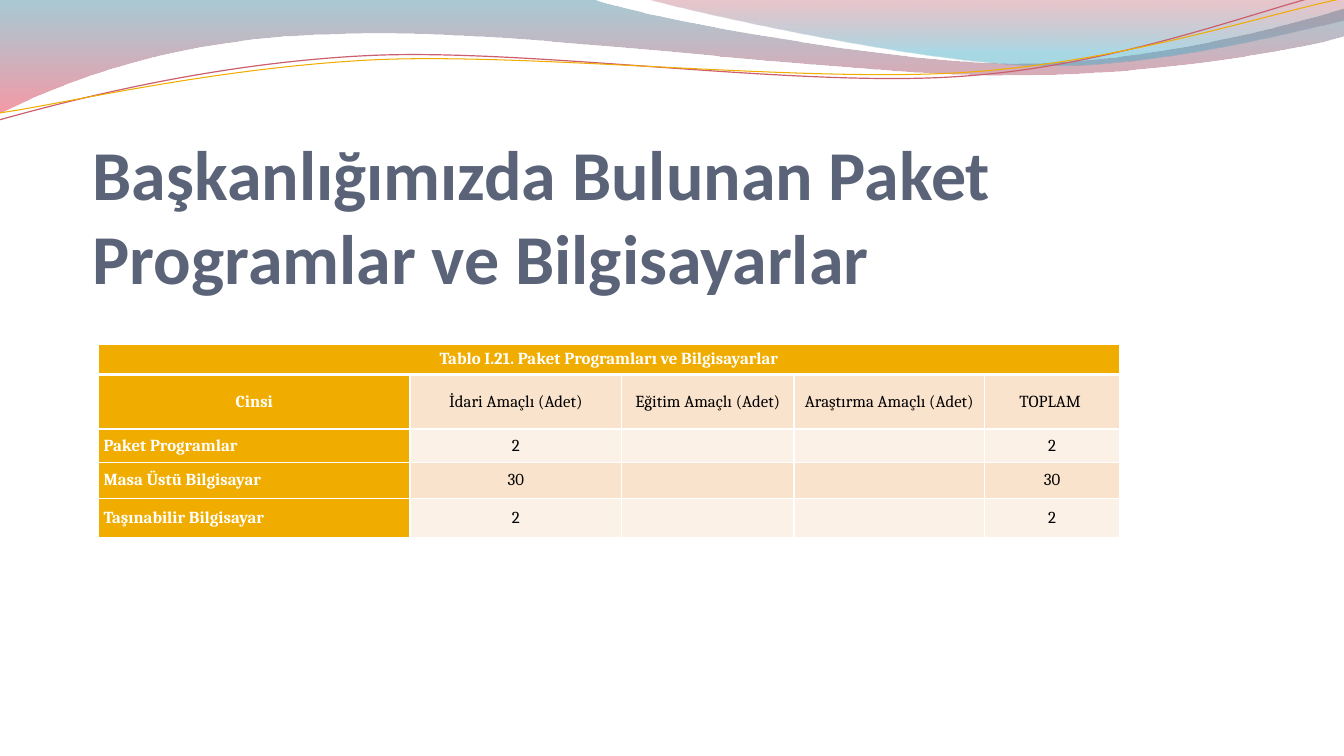
from lxml.etree import SubElement
from pptx import Presentation
from pptx.dml.color import RGBColor
from pptx.enum.text import MSO_ANCHOR as Anchor, MSO_AUTO_SIZE as AutoSize, PP_ALIGN as Align
from pptx.oxml.ns import qn
from pptx.util import Pt

AMBER, WHITE, BLACK, SLATE = "F0AD00", "FFFFFF", "000000", "5A6378"
BANDS = ("FCF1E7", "F9E3CC")

# Each wave starts at a point; two numbers draw a line, six a curve
UPPER_WAVE = [(0, 0), (422.6, -0.7),
              (456.5, 12.2, 637.2, 45.4, 727.9, 45.4),
              (819.4, 45.4, 920.2, 18.7, 959.8, 6.5), (961.2, 25.9),
              (943.9, 31.7, 835.2, 54.7, 715.7, 54),
              (596.9, 54, 366.5, 20.2, 247, 24.5),
              (123.1, 25.9, 43.9, 59.8, -0.7, 81.4)]
RIGHT_WAVE = [(460.1, -0.7),
              (488.9, 7.9, 654.5, 44.6, 738, 46.8),
              (821.5, 49.7, 923, 23, 959.8, 15.1), (959.8, 0)]
RED_LINE = [(-0.7, 85.7),
            (46.1, 72.7, 151.9, 44.6, 265.7, 39.6),
            (379.4, 34.6, 568.8, 62.6, 684, 54.7),
            (799.2, 47.5, 901.4, 5.8, 958.3, -7.2)]
AMBER_LINE = [(0, 80.6),
              (45.4, 74.2, 157, 47.5, 272.2, 42.5),
              (386.6, 38.2, 573.1, 59, 687.6, 51.8),
              (802.8, 44.6, 903.6, 10.1, 960.5, -1.4)]

TABLE_TITLE = "Tablo I.21. Paket Programları ve Bilgisayarlar"
ROWS = [
    ["Cinsi", "İdari Amaçlı (Adet)", "Eğitim Amaçlı (Adet)", "Araştırma Amaçlı (Adet)", "TOPLAM "],
    ["Paket Programlar", "2", "", "", "2"],
    ["Masa Üstü Bilgisayar", "30", "", "", "30"],
    ["Taşınabilir Bilgisayar", "2", "", "", "2"],
]
COLUMN_WIDTHS = (222.5, 151.2, 123.1, 136.1, 96.5)
ROW_HEIGHTS = (21.6, 38.9, 23.8, 25.9, 28.1)


def colour(value):
    return RGBColor.from_string(value)


def add_outline(page, segments, close):
    """Draw the outline through its end points, then bend the curved parts."""
    start, *ends = [(Pt(segment[-2]), Pt(segment[-1])) for segment in segments]
    builder = page.shapes.build_freeform(*start, scale=1.0)
    builder.add_line_segments(ends, close=close)
    shape = builder.convert_to_shape()
    shape.shadow.inherit = False
    lines = list(shape.element.spPr.iter(qn("a:lnTo")))
    for line, segment in zip(lines, segments[1:]):
        if len(segment) == 6:
            curve = SubElement(line.getparent(), qn("a:cubicBezTo"))
            for x, y in zip(segment[::2], segment[1::2]):
                SubElement(curve, qn("a:pt"), x=str(Pt(x) - shape.left), y=str(Pt(y) - shape.top))
            line.getparent().replace(line, curve)
    return shape


def add_wave(page, segments, stops):
    wave = add_outline(page, segments, True)
    wave.line.fill.background()
    wave.fill.gradient()
    wave.fill.gradient_angle = 270
    for stop, (position, value, _) in zip(wave.fill.gradient_stops, stops):
        stop.position = position
        stop.color.rgb = colour(value)
    # Opacity of each gradient stop
    for node, (_, _, opacity) in zip(wave.element.spPr.iter(qn("a:srgbClr")), stops):
        SubElement(node, qn("a:alpha"), val=str(opacity * 1000))


def add_wave_line(page, segments, value, width):
    curve = add_outline(page, segments, False)
    curve.fill.background()
    curve.line.color.rgb = colour(value)
    curve.line.width = Pt(width)


def add_span(para, text, font, size, value, bold):
    span = para.add_run()
    span.text = text
    span.font.name = font
    span.font.size = Pt(size)
    span.font.bold = bold
    span.font.color.rgb = colour(value)


def set_title(page, text):
    title = page.shapes.title
    title.element.getparent().append(title.element)  # in front of the waves
    title.left, title.top, title.width, title.height = Pt(66.2), Pt(28.8), Pt(828), Pt(184.3)
    box = title.text_frame
    box.word_wrap = True
    box.auto_size = AutoSize.NONE
    box.vertical_anchor = Anchor.BOTTOM
    box.margin_left = box.margin_right = box.margin_bottom = 0
    box.margin_top = Pt(3.6)
    para = box.paragraphs[0]
    para.alignment = Align.LEFT
    add_span(para, text, "Calibri", 50, SLATE, True)


def add_border(cell, side, width):
    line = SubElement(cell._tc.get_or_add_tcPr(), qn(f"a:ln{side}"), w=str(Pt(width)))
    fill = SubElement(line, qn("a:solidFill"))
    SubElement(fill, qn("a:srgbClr"), val=WHITE)


def format_cell(cell, text, fill, value, bold, align, heavy_top=False, heavy_bottom=False):
    for side, width in (("L", 1), ("R", 1), ("T", 3 if heavy_top else 1),
                        ("B", 3 if heavy_bottom else 1)):
        add_border(cell, side, width)
    cell.fill.solid()
    cell.fill.fore_color.rgb = colour(fill)
    cell.vertical_anchor = Anchor.MIDDLE
    cell.margin_left = cell.margin_right = Pt(3.6)
    cell.margin_top = cell.margin_bottom = 0
    para = cell.text_frame.paragraphs[0]
    para.alignment = align
    if text:
        add_span(para, text, "Cambria", 12, value, bold)


def add_inventory(page):
    frame = page.shapes.add_table(len(ROW_HEIGHTS), len(COLUMN_WIDTHS), Pt(70.4), Pt(246),
                                  Pt(sum(COLUMN_WIDTHS)), Pt(sum(ROW_HEIGHTS)))
    table = frame.table
    table.first_row = table.horz_banding = False
    for column, width in zip(table.columns, COLUMN_WIDTHS):
        column.width = Pt(width)
    for row, height in zip(table.rows, ROW_HEIGHTS):
        row.height = Pt(height)

    # Heading across all columns
    table.cell(0, 0).merge(table.cell(0, len(COLUMN_WIDTHS) - 1))
    for c in range(len(COLUMN_WIDTHS)):
        format_cell(table.cell(0, c), "" if c else TABLE_TITLE, AMBER, WHITE, True,
                    Align.CENTER, heavy_bottom=True)

    # Amber first column, banded values
    for r, texts in enumerate(ROWS, start=1):
        for c, text in enumerate(texts):
            first = c == 0
            align = Align.LEFT if first and r > 1 else Align.CENTER
            format_cell(table.cell(r, c), text, AMBER if first else BANDS[r % 2],
                        WHITE if first else BLACK, first, align, heavy_top=r == 1)


def main():
    deck = Presentation()
    deck.slide_width, deck.slide_height = Pt(960), Pt(540)
    page = deck.slides.add_slide(deck.slide_layouts[5])

    # Wave decoration
    add_wave(page, UPPER_WAVE, [(0, "3F8A9F", 45), (1, "EF445B", 55)])
    add_wave(page, RIGHT_WAVE, [(0, "B84253", 30), (0.8, "42ABC7", 45)])
    add_wave_line(page, RED_LINE, "CB5F6E", 0.85)
    add_wave_line(page, AMBER_LINE, AMBER, 0.75)

    # Title and table
    set_title(page, "Başkanlığımızda Bulunan Paket Programlar ve Bilgisayarlar")
    add_inventory(page)
    deck.save("out.pptx")


if __name__ == "__main__":
    main()
